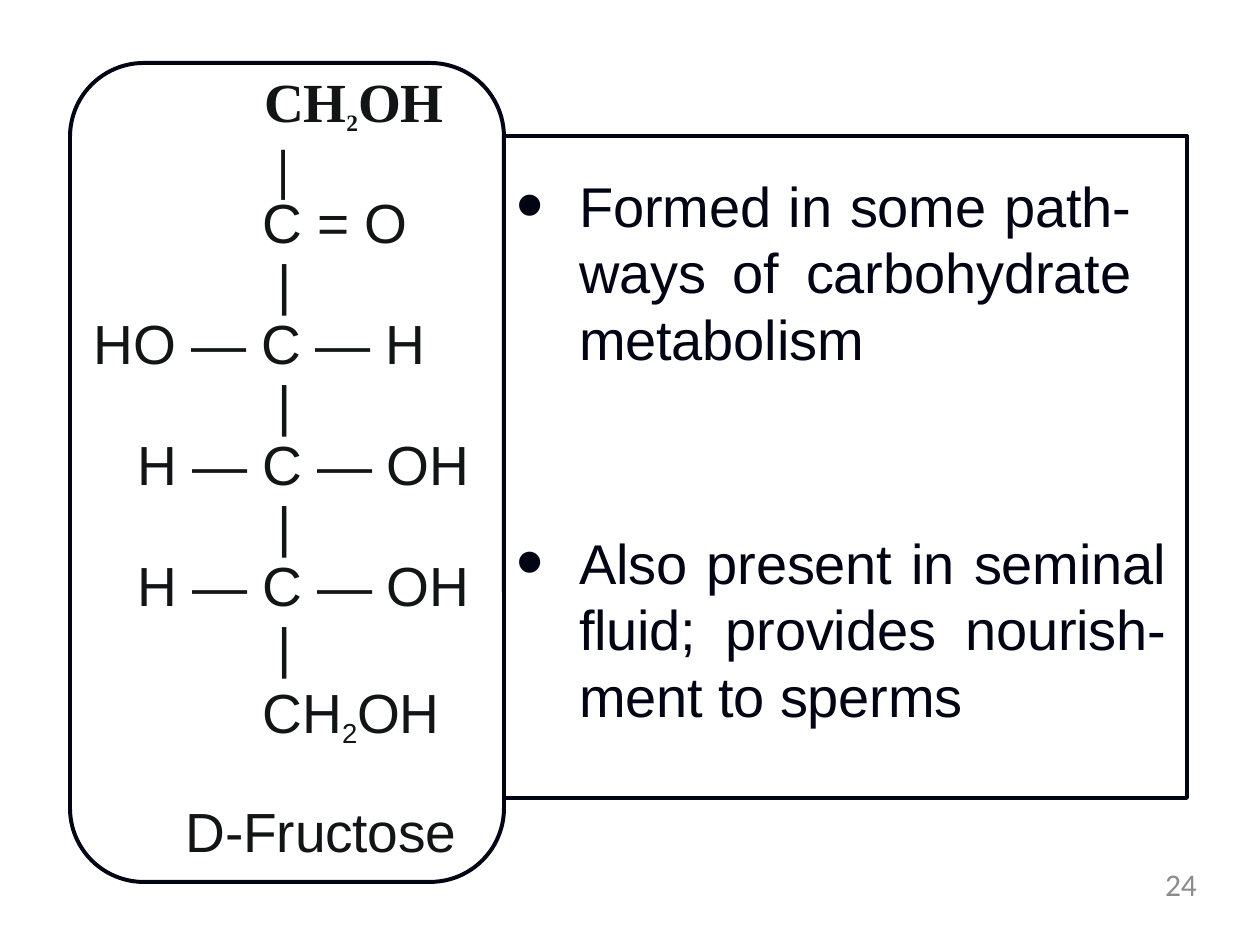
from dataclasses import dataclass

from lxml.etree import SubElement
from pptx import Presentation
from pptx.dml.color import RGBColor
from pptx.enum.shapes import MSO_SHAPE as Shape
from pptx.enum.text import MSO_ANCHOR, MSO_AUTO_SIZE, PP_ALIGN as Align
from pptx.oxml.ns import qn
from pptx.util import Emu, Pt

PX = 914400 // 126


@dataclass(frozen=True)
class Theme:
    ink: RGBColor = RGBColor(0x00, 0x04, 0x13)
    formula: RGBColor = RGBColor(0x12, 0x15, 0x16)
    muted: RGBColor = RGBColor(0x8C, 0x8C, 0x8C)
    sans: str = "Arial"
    serif: str = "Times New Roman"
    number: str = "Calibri"
    formula_size: float = 31.5
    list_size: float = 32
    number_size: float = 18
    outline: float = 2.28


THEME = Theme()
FORMULA_STYLE = (THEME.sans, THEME.formula_size, THEME.formula)
HEAD_STYLE = (THEME.serif, THEME.formula_size, THEME.formula)
LIST_STYLE = (THEME.sans, THEME.list_size, THEME.ink)
NUMBER_STYLE = (THEME.number, THEME.number_size, THEME.muted)

ALCOHOL_GROUP = ["CH", "2", "OH"]
BOND = "|"
# Text and left indent of each row; a bond hangs below every row
CARBON_ROWS = [
    ("C = O", 170),
    ("HO — C — H", 1),
    ("H — C — OH", 45),
    ("H — C — OH", 45),
]
SUGAR_NAME = "D-Fructose"
# Text and box of each fact
FACTS = [
    ("Formed in some path- ways of carbohydrate metabolism", (515, 172, 616, 204)),
    ("Also present in seminal fluid; provides nourish- ment to sperms", (515, 529, 651, 204)),
]
PAGE_NUMBER = "24"


def px(length):
    return Emu(length * PX)


def place(shape, box):
    shape.left, shape.top, shape.width, shape.height = map(px, box)
    frame = shape.text_frame
    frame.margin_left = frame.margin_right = frame.margin_top = frame.margin_bottom = 0
    frame.word_wrap = True
    frame.auto_size = MSO_AUTO_SIZE.NONE
    frame.vertical_anchor = MSO_ANCHOR.TOP
    return frame


def text_box(slide, box):
    return place(slide.shapes.add_textbox(0, 0, 0, 0), box)


def next_paragraph(frame, spacing=None, indent=0, align=Align.LEFT):
    """Return the empty first paragraph, or a new one, with its layout set."""
    first = frame.paragraphs[0]
    paragraph = frame.add_paragraph() if first.runs else first
    paragraph.alignment = align
    paragraph.space_before = Pt(0)
    if spacing:
        paragraph.line_spacing = Pt(spacing)
    props = paragraph._p.get_or_add_pPr()
    props.set("marL", str(px(indent)))
    props.set("indent", "0")
    return paragraph


def add_run(paragraph, text, style, bold=False):
    run = paragraph.add_run()
    run.text = text
    font = run.font
    font.name, size, font.color.rgb = style
    font.size = Pt(size)
    font.bold = bold
    font._element.set("spc", "-10")
    return run


def add_formula(paragraph, parts, style, subscript_size, bold=False):
    for part in parts:
        run = add_run(paragraph, part, style, bold)
        if part.isdigit():
            run.font.size = Pt(subscript_size)
            run.font._element.set("baseline", "-23000")


def add_panel(slide, kind, box):
    panel = slide.shapes.add_shape(kind, *map(px, box))
    panel.shadow.inherit = False
    panel.fill.background()
    panel.line.color.rgb = THEME.ink
    panel.line.width = Pt(THEME.outline)
    return panel


def add_fact(placeholder, text, box):
    fact = next_paragraph(place(placeholder, box), 38, align=Align.JUSTIFY)
    props = fact._p.get_or_add_pPr()
    props.set("marL", str(px(64)))
    props.set("indent", str(px(-63)))
    SubElement(props, qn("a:buSzPct")).set("val", "139000")
    SubElement(props, qn("a:buChar")).set("char", "•")
    add_run(fact, text, LIST_STYLE)


def add_molecule(slide):
    head = place(slide.shapes.title, (260, 73, 184, 131))
    add_formula(next_paragraph(head, 36.2, 4), ALCOHOL_GROUP, HEAD_STYLE, 23.2, True)
    add_run(next_paragraph(head, 36.2, 18), BOND, HEAD_STYLE, True)

    chain = text_box(slide, (93, 194, 379, 493))
    for row, indent in CARBON_ROWS:
        add_run(next_paragraph(chain, 34.6, indent), row, FORMULA_STYLE)
        add_run(next_paragraph(chain, 34.6, 4, Align.CENTER), BOND, FORMULA_STYLE)

    tail = text_box(slide, (262, 678, 190, 69))
    add_formula(next_paragraph(tail, indent=1), ALCOHOL_GROUP, FORMULA_STYLE, 27)
    name = text_box(slide, (185, 797, 285, 69))
    add_run(next_paragraph(name, indent=1), SUGAR_NAME, FORMULA_STYLE)


def main():
    deck = Presentation()
    deck.slide_width, deck.slide_height = px(1260), px(945)
    slide = deck.slides.add_slide(deck.slide_layouts.get_by_name("Two Content"))

    molecule_panel = add_panel(slide, Shape.ROUNDED_RECTANGLE, (70, 63, 434, 819))
    molecule_panel.adjustments[0] = 0.17
    add_panel(slide, Shape.RECTANGLE, (504, 136, 683, 662))

    add_molecule(slide)
    for index, (text, box) in enumerate(FACTS, start=1):
        add_fact(slide.placeholders[index], text, box)

    number = text_box(slide, (907, 878, 290, 48))
    add_run(next_paragraph(number, 14.2, align=Align.RIGHT), PAGE_NUMBER, NUMBER_STYLE)
    deck.save("out.pptx")


if __name__ == "__main__":
    main()
